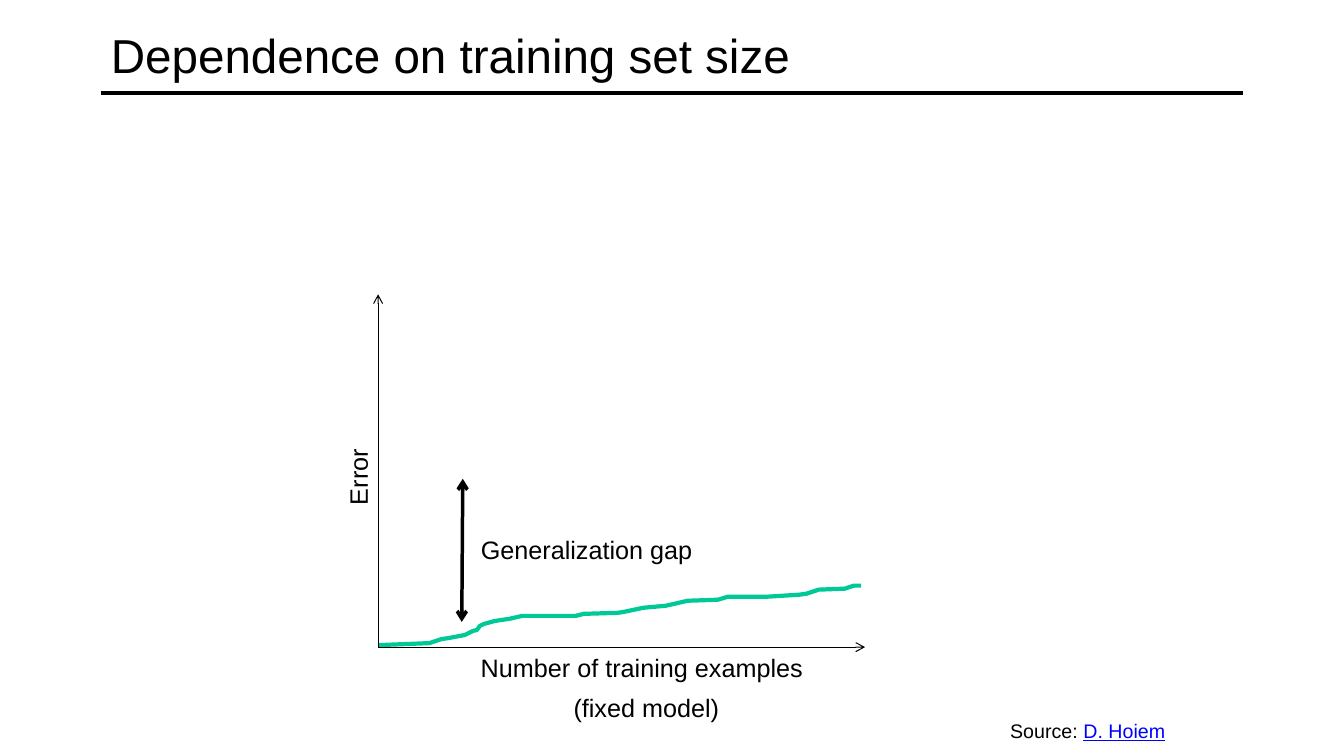
from dataclasses import dataclass

from lxml.etree import SubElement
from pptx import Presentation
from pptx.dml.color import RGBColor
from pptx.enum.shapes import MSO_CONNECTOR
from pptx.enum.text import MSO_ANCHOR, MSO_AUTO_SIZE, PP_ALIGN
from pptx.oxml.ns import qn
from pptx.util import Inches, Pt


@dataclass(frozen=True)
class Theme:
    font: str = "Arial"
    black: RGBColor = RGBColor(0, 0, 0)
    green: RGBColor = RGBColor(0x00, 0xC8, 0x96)
    blue: RGBColor = RGBColor(0, 0, 0xFF)
    title_size: int = 34
    label_size: int = 18
    source_size: int = 14
    thick: float = 3
    medium: float = 2.5
    thin: float = 0.75


THEME = Theme()
ORIGIN = (3.75, 6.42)
TRAINING_ERROR = [
    (3.76, 6.4), (4.26, 6.38), (4.38, 6.34), (4.45, 6.33), (4.61, 6.3),
    (4.69, 6.26), (4.73, 6.25), (4.76, 6.21), (4.8, 6.19), (4.91, 6.16),
    (5.05, 6.14), (5.18, 6.11), (5.71, 6.11), (5.79, 6.09), (6.13, 6.08),
    (6.19, 6.07), (6.38, 6.03), (6.6, 6.01), (6.69, 5.99), (6.82, 5.96),
    (7.12, 5.95), (7.22, 5.92), (7.61, 5.92), (7.93, 5.9), (8.0, 5.89),
    (8.12, 5.85), (8.38, 5.84), (8.47, 5.81), (8.54, 5.81),
]


def style_font(font, size, color=THEME.black):
    font.name = THEME.font
    font.size = Pt(size)
    font.color.rgb = color


def set_title(slide, text, left, top, width, height):
    title = slide.shapes.title
    title.left, title.top = Inches(left), Inches(top)
    title.width, title.height = Inches(width), Inches(height)
    frame = title.text_frame
    frame.text = text
    frame.auto_size = MSO_AUTO_SIZE.NONE
    frame.vertical_anchor = MSO_ANCHOR.MIDDLE
    paragraph = frame.paragraphs[0]
    paragraph.alignment = PP_ALIGN.LEFT
    style_font(paragraph.font, THEME.title_size)


def add_line(slide, start, end, weight, arrows=()):
    """Draw a straight line; arrows may name headEnd (start) and tailEnd (end)."""
    x1, y1, x2, y2 = map(Inches, (*start, *end))
    connector = slide.shapes.add_connector(MSO_CONNECTOR.STRAIGHT, x1, y1, x2, y2)
    connector.line.color.rgb = THEME.black
    connector.line.width = Pt(weight)
    outline = connector.line._get_or_add_ln()
    for arrow in arrows:
        SubElement(outline, qn(f"a:{arrow}"), type="arrow")
    SubElement(connector._element.spPr, qn("a:effectLst"))


def add_curve(slide, points, color):
    (start_x, start_y), *rest = [(Inches(x), Inches(y)) for x, y in points]
    builder = slide.shapes.build_freeform(start_x, start_y)
    builder.add_line_segments(rest, close=False)
    curve = builder.convert_to_shape()
    curve.shadow.inherit = False
    curve.fill.background()
    curve.line.color.rgb = color
    curve.line.width = Pt(THEME.thick)


def add_label(slide, text, left, top, width, height=0.4, size=THEME.label_size, rotation=0):
    box = slide.shapes.add_textbox(*map(Inches, (left, top, width, height)))
    box.rotation = rotation
    box.text_frame.word_wrap = False
    paragraph = box.text_frame.paragraphs[0]
    paragraph.text = text
    style_font(paragraph.font, size)
    return paragraph


def main():
    presentation = Presentation()
    presentation.slide_width = Inches(13.33)
    presentation.slide_height = Inches(7.5)
    slide = presentation.slides.add_slide(presentation.slide_layouts[5])

    set_title(slide, "Dependence on training set size", 1, 0.08, 11.33, 0.92)
    add_line(slide, (1, 0.92), (12.33, 0.92), THEME.thick)

    add_curve(slide, TRAINING_ERROR, THEME.green)
    for axis_end in ((8.58, ORIGIN[1]), (ORIGIN[0], 2.92)):
        add_line(slide, ORIGIN, axis_end, THEME.thin, ["tailEnd"])
    add_line(slide, (4.58, 6.17), (4.59, 4.75), THEME.medium, ["headEnd", "tailEnd"])

    add_label(slide, "Number of training examples", 4.67, 6.42, 3.43)
    add_label(slide, "Error", 3.17, 4.53, 0.76, rotation=270)
    add_label(slide, "Generalization gap", 4.67, 5.25, 2.32)
    add_label(slide, "(fixed model)", 5.59, 6.82, 1.66)

    source = add_label(slide, "Source: ", 9.92, 7.08, 1.75, 0.34, THEME.source_size)
    author = source.add_run()
    author.text = "D. Hoiem"
    author.font.color.rgb = THEME.blue
    author.font.underline = True

    presentation.save("out.pptx")


if __name__ == "__main__":
    main()
